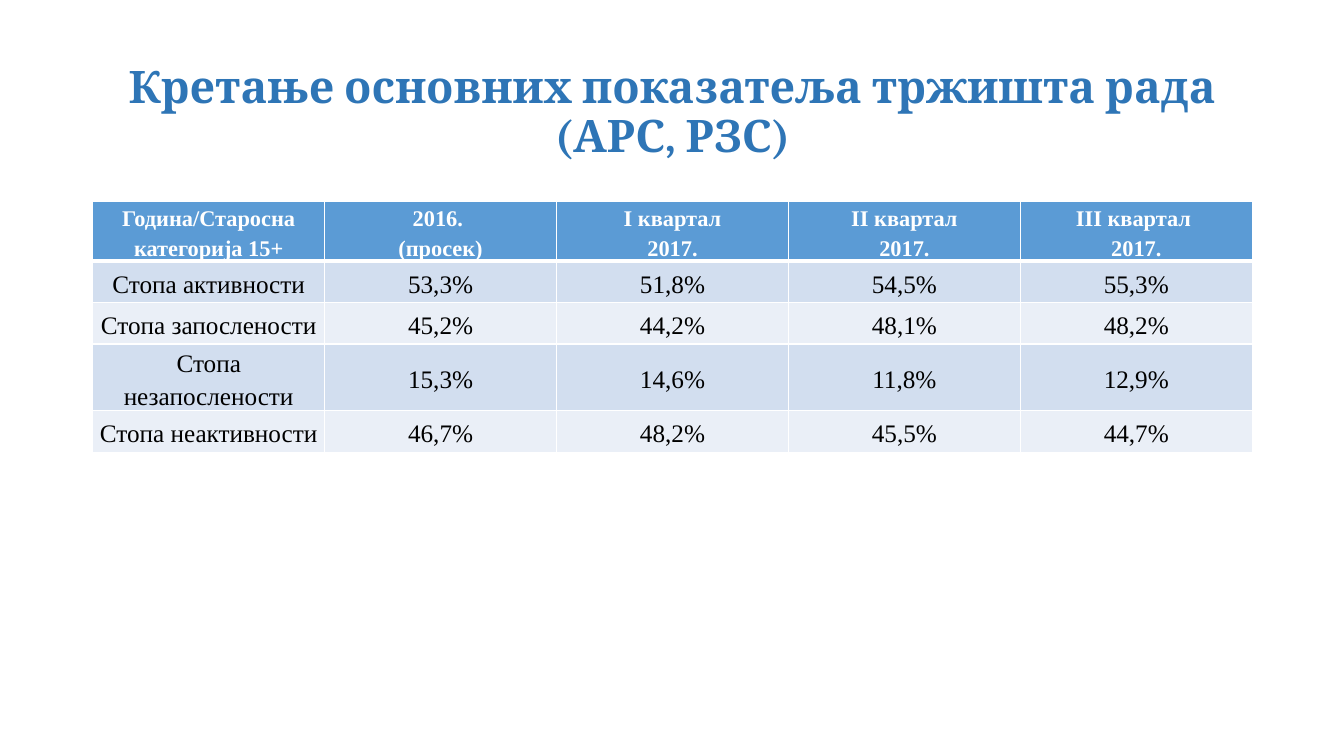
from lxml import etree
from pptx import Presentation
from pptx.dml.color import RGBColor
from pptx.enum import text
from pptx.oxml import ns
from pptx.util import Inches, Pt

COLORS = {
    "title": "2E75B6",
    "header": "5B9BD5",
    "odd": "D2DEEF",
    "even": "EAEFF7",
    "white": "FFFFFF",
    "black": "000000",
}
TITLE = "Кретање основних показатеља тржишта рада\v(АРС, РЗС)"
ROWS = [
    ["Година/Старосна категорија 15+", "2016. \n(просек)", "I квартал\n2017.",
     "II квартал\n2017.", "III квартал \n2017."],
    ["Стопа активности", "53,3%", "51,8%", "54,5%", "55,3%"],
    ["Стопа запослености", "45,2%", "44,2%", "48,1%", "48,2%"],
    ["Стопа незапослености", "15,3%", "14,6%", "11,8%", "12,9%"],
    ["Стопа неактивности", "46,7%", "48,2%", "45,5%", "44,7%"],
]


def rgb(name):
    return RGBColor.from_string(COLORS[name])


def write(tf, words, *, size, color, font="Times New Roman", bold=False,
          spacing=1.2, after=0):
    tf.text = words
    for p in tf.paragraphs:
        p.alignment = text.PP_ALIGN.CENTER
        p.line_spacing = spacing
        p.space_before = Pt(0)
        p.space_after = Pt(after)
        for r in p.runs:
            r.font.name = font
            r.font.size = Pt(size)
            r.font.bold = bold
            r.font.color.rgb = rgb(color)


def set_borders(cell, bottom):
    """Draw white borders; they must precede the fill in the cell's XML."""
    tc_pr = cell._tc.get_or_add_tcPr()
    widths = {"lnL": 1, "lnR": 1, "lnT": 1, "lnB": bottom}
    for i, (side, width) in enumerate(widths.items()):
        ln = etree.Element(ns.qn(f"a:{side}"), w=str(Pt(width)))
        fill = etree.SubElement(ln, ns.qn("a:solidFill"))
        etree.SubElement(fill, ns.qn("a:srgbClr"), val=COLORS["white"])
        tc_pr.insert(i, ln)


def add_title(s):
    sp = s.shapes.title
    sp.left, sp.top = Inches(0.92), Inches(0.4)
    sp.width, sp.height = Inches(11.5), Inches(1.45)
    sp.text_frame.vertical_anchor = text.MSO_ANCHOR.MIDDLE
    write(sp.text_frame, TITLE, size=32, color="title", font="Cambria",
          bold=True, spacing=0.9)


def add_rates_table(s):
    row_height = 0.41
    table = s.shapes.add_table(
        len(ROWS), len(ROWS[0]), Inches(0.92), Inches(2), Inches(11.5),
        Inches(row_height * len(ROWS))).table
    last = len(ROWS[0]) - 1
    for i, row in enumerate(ROWS):
        header = i == 0
        fill = "header" if header else "odd" if i % 2 else "even"
        for j, words in enumerate(row):
            cell = table.cell(i, j)
            cell.fill.solid()
            cell.fill.fore_color.rgb = rgb(fill)
            set_borders(cell, bottom=3 if header else 1)
            cell.margin_left = cell.margin_right = Inches(0.07)
            cell.margin_top = cell.margin_bottom = 0
            top = header and j == last
            cell.vertical_anchor = (text.MSO_ANCHOR.TOP if top
                                    else text.MSO_ANCHOR.MIDDLE)
            write(cell.text_frame, words, size=16 if header else 18,
                  color="white" if header else "black", bold=header,
                  after=10 if j == last and not header else 0)


def main():
    prs = Presentation()
    prs.slide_width, prs.slide_height = Inches(13.33), Inches(7.5)
    s = prs.slides.add_slide(prs.slide_layouts[5])  # title only
    add_title(s)
    add_rates_table(s)
    prs.save("out.pptx")


if __name__ == "__main__":
    main()
